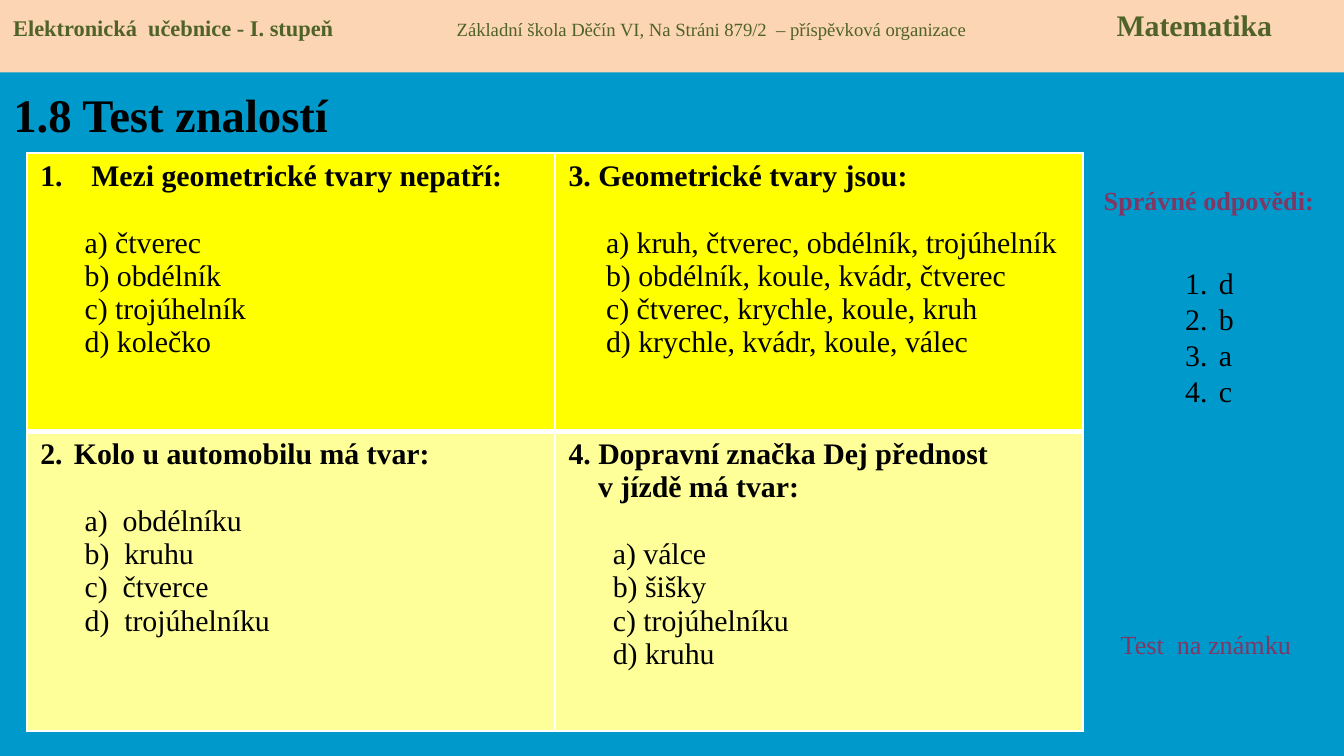
from dataclasses import dataclass

from lxml.etree import SubElement
from pptx import Presentation
from pptx.dml.color import RGBColor
from pptx.enum.shapes import MSO_SHAPE
from pptx.enum.text import MSO_ANCHOR, PP_ALIGN
from pptx.oxml.ns import qn
from pptx.util import Inches, Pt


@dataclass(frozen=True)
class Theme:
    font: str = "Times New Roman"
    background: str = "0099CC"
    band: str = "FCD5B5"
    green: str = "4F6228"
    purple: str = "813763"
    black: str = "000000"
    white: str = "FFFFFF"
    rows: tuple = ("FFFF00", "FFFF99")
    title: int = 25
    body: int = 16
    side: int = 14
    school: int = 10
    series: int = 12


class SlideBuilder:
    """Hold the theme and the current slide and add each kind of element."""

    def __init__(self, prs, theme):
        self.theme = theme
        self.s = prs.slides.add_slide(prs.slide_layouts[5])
        fill = self.s.background.fill
        fill.solid()
        fill.fore_color.rgb = RGBColor.from_string(theme.background)

    def run(self, p, text, size, color, bold=False):
        r = p.add_run()
        r.text = text
        style = {"name": self.theme.font, "size": Pt(size), "bold": bold}
        for key, value in style.items():
            setattr(r.font, key, value)
        r.font.color.rgb = RGBColor.from_string(color)

    def indent(self, p, left, first=0.0, number=None):
        pPr = p._p.get_or_add_pPr()
        pPr.set("marL", str(Inches(left)))
        pPr.set("indent", str(Inches(first)))
        if number:
            SubElement(pPr, qn("a:buAutoNum"), type="arabicPeriod", startAt=str(number))

    def frame(self, tf, **values):
        for key, value in values.items():
            setattr(tf, key, value)
        return tf.paragraphs[0]

    def title(self, text, box):
        sp = self.s.shapes.title
        sp.left, sp.top, sp.width, sp.height = map(Inches, box)
        p = self.frame(sp.text_frame, word_wrap=False, vertical_anchor=MSO_ANCHOR.MIDDLE)
        p.alignment = PP_ALIGN.LEFT
        self.run(p, text, self.theme.title, self.theme.black, True)

    def header(self, parts, box, stops):
        sp = self.s.shapes.add_shape(MSO_SHAPE.RECTANGLE, *map(Inches, box))
        sp.shadow.inherit = False
        sp.fill.solid()
        sp.fill.fore_color.rgb = RGBColor.from_string(self.theme.band)
        sp.line.fill.background()
        p = self.frame(sp.text_frame, word_wrap=True, vertical_anchor=MSO_ANCHOR.TOP)
        p.alignment = PP_ALIGN.LEFT
        tabs = SubElement(p._p.get_or_add_pPr(), qn("a:tabLst"))
        for stop in stops:
            SubElement(tabs, qn("a:tab"), pos=str(Inches(stop)), algn="l")
        for text, size, bold in parts:
            self.run(p, text, size, self.theme.green, bold)

    def label(self, text, box, bold=False, align=PP_ALIGN.LEFT):
        tf = self.s.shapes.add_textbox(*map(Inches, box)).text_frame
        p = self.frame(tf, word_wrap=True)
        p.alignment = align
        self.run(p, text, self.theme.side, self.theme.purple, bold)

    def numbered(self, items, box, top):
        tf = self.s.shapes.add_textbox(*map(Inches, box)).text_frame
        p = self.frame(tf, word_wrap=True, margin_top=Inches(top), margin_right=0)
        for i, item in enumerate(items):
            p = tf.add_paragraph() if i else p
            self.indent(p, 0.25, -0.25, 1)
            self.run(p, item, self.theme.body, self.theme.black)

    def borders(self, cell, bottom):
        tcPr = cell._tc.get_or_add_tcPr()
        for side, width in {"L": 1, "R": 1, "T": 1, "B": bottom}.items():
            ln = SubElement(tcPr, qn(f"a:ln{side}"), w=str(Pt(width)))
            fill = SubElement(ln, qn("a:solidFill"))
            SubElement(fill, qn("a:srgbClr"), val=self.theme.white)

    def question(self, cell, lines, hang, number, answers, left):
        tf = cell.text_frame
        for i, line in enumerate(lines):
            p = tf.add_paragraph() if i else tf.paragraphs[0]
            self.indent(p, hang, 0 if i else -hang, number)
            self.run(p, line, self.theme.body, self.theme.black, True)
        for i, answer in enumerate(answers):
            p = tf.add_paragraph()
            self.indent(p, left)
            p.space_before = Pt(0 if i else 18)
            self.run(p, answer, self.theme.body, self.theme.black)

    def table(self, grid, box, heights):
        rows, cols = len(grid), len(grid[0])
        table = self.s.shapes.add_table(rows, cols, *map(Inches, box)).table
        for i, height in enumerate(heights):
            table.rows[i].height = Inches(height)
            for j, content in enumerate(grid[i]):
                cell = table.cell(i, j)
                self.borders(cell, 1 if i else 3)
                cell.fill.solid()
                cell.fill.fore_color.rgb = RGBColor.from_string(self.theme.rows[i])
                self.question(cell, *content)


def main():
    prs = Presentation()
    prs.slide_width = Inches(10)
    prs.slide_height = prs.slide_width * 9 // 16
    theme = Theme()
    b = SlideBuilder(prs, theme)

    b.title("1.8 Test znalostí", (0, 0.59, 2.57, 0.52))
    b.label("Správné odpovědi:", (8.05, 1.32, 1.89, 0.34), True, PP_ALIGN.CENTER)
    grid = [
        [
            (["Mezi geometrické tvary nepatří:"], 0.38, 1,
             ["a) čtverec", "b) obdélník", "c) trojúhelník", "d) kolečko"], 0.33),
            (["3. Geometrické tvary jsou:"], 0, None,
             ["a) kruh, čtverec, obdélník, trojúhelník",
              "b) obdélník, koule, kvádr, čtverec",
              "c) čtverec, krychle, koule, kruh",
              "d) krychle, kvádr, koule, válec"], 0.28),
        ],
        [
            (["Kolo u automobilu má tvar:"], 0.25, 2,
             ["a)  obdélníku", "b)  kruhu", "c)  čtverce", "d)  trojúhelníku"], 0.33),
            (["4. Dopravní značka Dej přednost", "v jízdě má tvar:"], 0.22, None,
             ["a) válce", "b) šišky", "c) trojúhelníku", "d) kruhu"], 0.33),
        ],
    ]
    b.table(grid, (0.2, 1.14, 7.86, 4.3), (2.07, 2.23))
    b.numbered("dbac", (8.72, 1.65, 0.55, 1.99), 0.32)
    b.label("Test  na známku", (8.24, 4.63, 1.57, 0.34))
    b.header(
        [
            ("Elektronická  učebnice - I. stupeň\t", theme.series, True),
            ("Základní škola Děčín VI, Na Stráni 879/2  – příspěvková organizace\t",
             theme.school, False),
            ("Matematika", theme.body, True),
        ],
        (0, 0, 10, 0.54),
        (3.3, 8.21),
    )
    prs.save("out.pptx")


if __name__ == "__main__":
    main()
